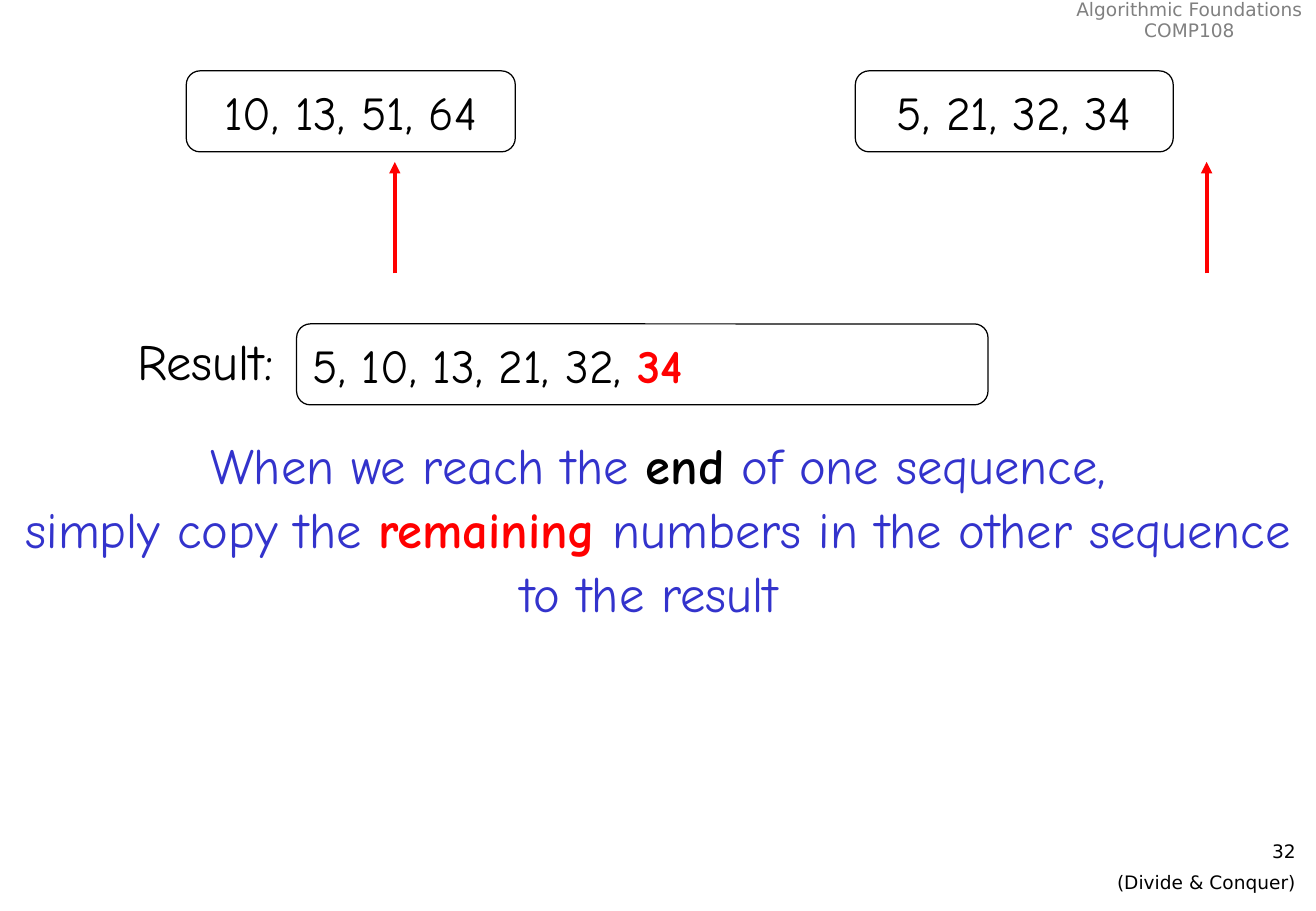
"""Build the merge-step slide on a grid of 130 columns by 90 rows."""
from dataclasses import dataclass

import pptx
import pptx.dml.color
import pptx.enum.shapes
import pptx.enum.text
import pptx.oxml
import pptx.oxml.ns
import pptx.util

CELL = pptx.util.Inches(1) / 12
COLS, ROWS = 130, 90
BLACK, WHITE, RED, BLUE, GREY = "000000", "FFFFFF", "FF0000", "3333CC", "808080"
HAND, SANS = "Comic Neue", "DejaVu Sans"
ALIGN = pptx.enum.text.PP_ALIGN
ANCHOR = pptx.enum.text.MSO_ANCHOR
FIT = pptx.enum.text.MSO_AUTO_SIZE


@dataclass(frozen=True)
class Run:
    text: str
    color: str = BLACK
    bold: bool = False


@dataclass(frozen=True)
class Block:
    left: float
    top: float
    width: float
    height: float
    lines: tuple[tuple[Run, ...], ...]
    size: float
    font: str = HAND
    align: ALIGN = ALIGN.CENTER
    boxed: bool = False
    wrap: bool = True
    grow: bool = False
    pitch: float = 1.0
    gap: float = 0


@dataclass(frozen=True)
class Arrow:
    col: float
    start: float = 27
    end: float = 16


BLOCKS = (
    Block(105, -0.5, 25, 5.2,
          ((Run("Algorithmic Foundations", GREY),), (Run("COMP108", GREY),)),
          11, SANS, wrap=False, grow=True, pitch=0.9),
    Block(102.1, 82.4, 27.1, 6, ((Run("32"),), (Run("(Divide & Conquer)"),)),
          11, SANS, ALIGN.RIGHT, gap=5),
    Block(18.4, 7, 32.5, 8, ((Run("10, 13, 51, 64"),),), 28, boxed=True, wrap=False),
    Block(84.5, 7, 31.4, 8, ((Run("5, 21, 32, 34"),),), 28, boxed=True, wrap=False),
    Block(0, 42, COLS, 20, (
        (Run("When we reach the ", BLUE), Run("end", BLACK, True),
         Run(" of one sequence,", BLUE)),
        (Run("simply copy the ", BLUE), Run("remaining", RED, True),
         Run(" numbers in the other sequence to the result ", BLUE)),
    ), 30, grow=True, pitch=1.05),
    Block(29.3, 32, 68.3, 8,
          ((Run("5, 10, 13, 21, 32, "), Run("34", RED, True)),),
          28, align=ALIGN.LEFT, boxed=True, wrap=False),
    Block(2.2, 32, 26, 7.3, ((Run("Result:"),),), 30, align=ALIGN.RIGHT, grow=True),
)
ARROWS = (Arrow(39), Arrow(119.2))


def grid(count: float) -> int:
    """Turn a count of cells into a length."""
    return round(count * CELL)


def paint(target, color: str) -> None:
    """Set the colour of a fill or a font."""
    if hasattr(target, "solid"):
        target.solid()
        target = target.fore_color
    else:
        target = target.color
    target.rgb = pptx.dml.color.RGBColor.from_string(color)


def write(frame, block: Block) -> None:
    """Write the lines of a block run by run."""
    frame.word_wrap = block.wrap
    frame.auto_size = FIT.SHAPE_TO_FIT_TEXT if block.grow else FIT.NONE
    frame.vertical_anchor = ANCHOR.MIDDLE if block.boxed else ANCHOR.TOP
    for index, line in enumerate(block.lines):
        para = frame.add_paragraph() if index else frame.paragraphs[0]
        para.alignment = block.align
        para.line_spacing = block.pitch
        para.space_before = pptx.util.Pt(block.gap if index else 0)
        for part in line:
            run = para.add_run()
            run.text = part.text
            run.font.name = block.font
            run.font.size = pptx.util.Pt(block.size)
            run.font.bold = part.bold
            paint(run.font, part.color)


def place(shapes, block: Block) -> None:
    """Draw a block as a rounded box or as plain text."""
    spot = [grid(n) for n in (block.left, block.top, block.width, block.height)]
    if block.boxed:
        kind = pptx.enum.shapes.MSO_SHAPE.ROUNDED_RECTANGLE
        shape = shapes.add_shape(kind, *spot)
        shape.adjustments[0] = 0.17
        shape.shadow.inherit = False
        paint(shape.fill, WHITE)
        paint(shape.line.fill, BLACK)
        shape.line.width = pptx.util.Pt(0.75)
    else:
        shape = shapes.add_textbox(*spot)
    write(shape.text_frame, block)


def point(shapes, arrow: Arrow) -> None:
    """Draw a red arrow that points up."""
    kind = pptx.enum.shapes.MSO_CONNECTOR.STRAIGHT
    col = grid(arrow.col)
    line = shapes.add_connector(kind, col, grid(arrow.start), col, grid(arrow.end))
    paint(line.line.fill, RED)
    line.line.width = pptx.util.Pt(2.25)
    tag = pptx.oxml.ns.qn
    tail = line.line._get_or_add_ln().makeelement(tag("a:tailEnd"), {"type": "triangle"})
    line.line._get_or_add_ln().append(tail)
    props = line._element.spPr
    props.append(props.makeelement(tag("a:effectLst"), {}))


def main() -> None:
    """Build the slide and save it."""
    deck = pptx.Presentation()
    deck.slide_width, deck.slide_height = grid(COLS), grid(ROWS)
    shapes = deck.slides.add_slide(deck.slide_layouts[6]).shapes
    for block in BLOCKS:
        place(shapes, block)
    for arrow in ARROWS:
        point(shapes, arrow)
    deck.save("out.pptx")


if __name__ == "__main__":
    main()
